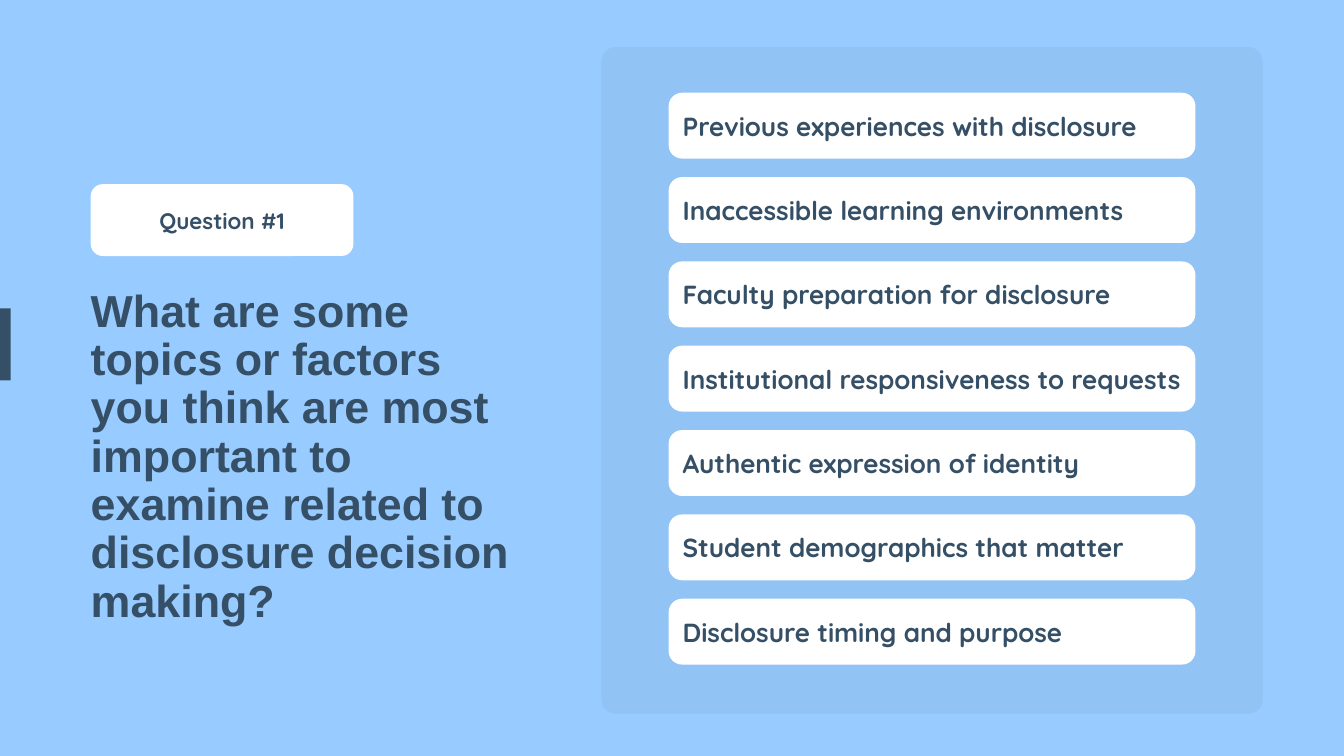
from lxml import etree
from pptx import Presentation
from pptx.dml.color import RGBColor
from pptx.enum.shapes import MSO_SHAPE
from pptx.enum.text import MSO_ANCHOR, PP_ALIGN
from pptx.oxml.ns import qn
from pptx.util import Pt

RECT, ROUNDED = MSO_SHAPE.RECTANGLE, MSO_SHAPE.ROUNDED_RECTANGLE
MIDDLE = MSO_ANCHOR.MIDDLE
LEFT, CENTER = PP_ALIGN.LEFT, PP_ALIGN.CENTER

LABEL = "Question #1"
QUESTION = ("What are some topics or factors you think are most important "
            "to examine related to disclosure decision making?")
TOPICS = [
    "Previous experiences with disclosure",
    "Inaccessible learning environments",
    "Faculty preparation for disclosure",
    "Institutional responsiveness to requests",
    "Authentic expression of identity",
    "Student demographics that matter",
    "Disclosure timing and purpose",
]

COLORS = {"sky": "98CBFF", "ink": "354F66", "card": "FFFFFF", "shade": "000000"}
FORMATS = {
    "question": {"name": "Arial", "size": Pt(48), "bold": True},
    "label": {"name": "Quicksand", "size": Pt(24), "bold": True},
    "topic": {"name": "Quicksand", "size": Pt(28), "bold": True},
}

# Lengths in px, 100 to the inch
PX = 9144
SLIDE_W, SLIDE_H = 2000, 1125
LABEL_BOX = (135, 274, 391, 107)
QUESTION_BOX = (135, 416, 651, 528)
ACCENT_BOX = (0, 459, 16, 107)
PANEL_BOX = (895, 70, 984, 992)
TOPIC_LEFT, TOPIC_W, TOPIC_H = 995, 784, 98
FIRST_TOP, LAST_TOP = 138, 891


def emu(box):
    return [round(length * PX) for length in box]


def add_block(slide, box, color, radius=0, opacity=100):
    """Add a plain filled rectangle, rounded if radius (px) is given."""
    block = slide.shapes.add_shape(ROUNDED if radius else RECT, *emu(box))
    if radius:
        block.adjustments[0] = radius / min(box[2:])
    block.shadow.inherit = False
    block.line.fill.background()
    block.fill.solid()
    block.fill.fore_color.rgb = RGBColor.from_string(COLORS[color])
    if opacity < 100:
        fill_color = block.fill._xPr.find(qn("a:solidFill"))[0]
        etree.SubElement(fill_color, qn("a:alpha"), val=str(opacity * 1000))
    return block


def write(shape, text, style, leading, align=LEFT, insets=(0, 0, 0, 0)):
    frame = shape.text_frame
    frame.word_wrap = True
    frame.vertical_anchor = MIDDLE
    for side, inset in zip(("left", "top", "right", "bottom"), emu(insets)):
        setattr(frame, f"margin_{side}", inset)
    paragraph = frame.paragraphs[0]
    paragraph.alignment = align
    paragraph.line_spacing = Pt(leading)
    run = paragraph.add_run()
    run.text = text
    for key, value in FORMATS[style].items():
        setattr(run.font, key, value)
    run.font.color.rgb = RGBColor.from_string(COLORS["ink"])


def main():
    deck = Presentation()
    deck.slide_width, deck.slide_height = emu((SLIDE_W, SLIDE_H))
    slide = deck.slides.add_slide(deck.slide_layouts[6])

    add_block(slide, (0, 0, SLIDE_W, SLIDE_H), "sky")
    question = slide.shapes.add_textbox(*emu(QUESTION_BOX))
    write(question, QUESTION, "question", 51.8)
    add_block(slide, ACCENT_BOX, "ink")
    label = add_block(slide, LABEL_BOX, "card", radius=18)
    write(label, LABEL, "label", 28.8, CENTER)

    add_block(slide, PANEL_BOX, "shade", radius=21, opacity=4)
    pitch = (LAST_TOP - FIRST_TOP) / (len(TOPICS) - 1)
    for row, topic in enumerate(TOPICS):
        box = (TOPIC_LEFT, FIRST_TOP + row * pitch, TOPIC_W, TOPIC_H)
        card = add_block(slide, box, "card", radius=20)
        write(card, topic, "topic", 33.6, insets=(15, 0, 5, 0))

    deck.save("out.pptx")


if __name__ == "__main__":
    main()
